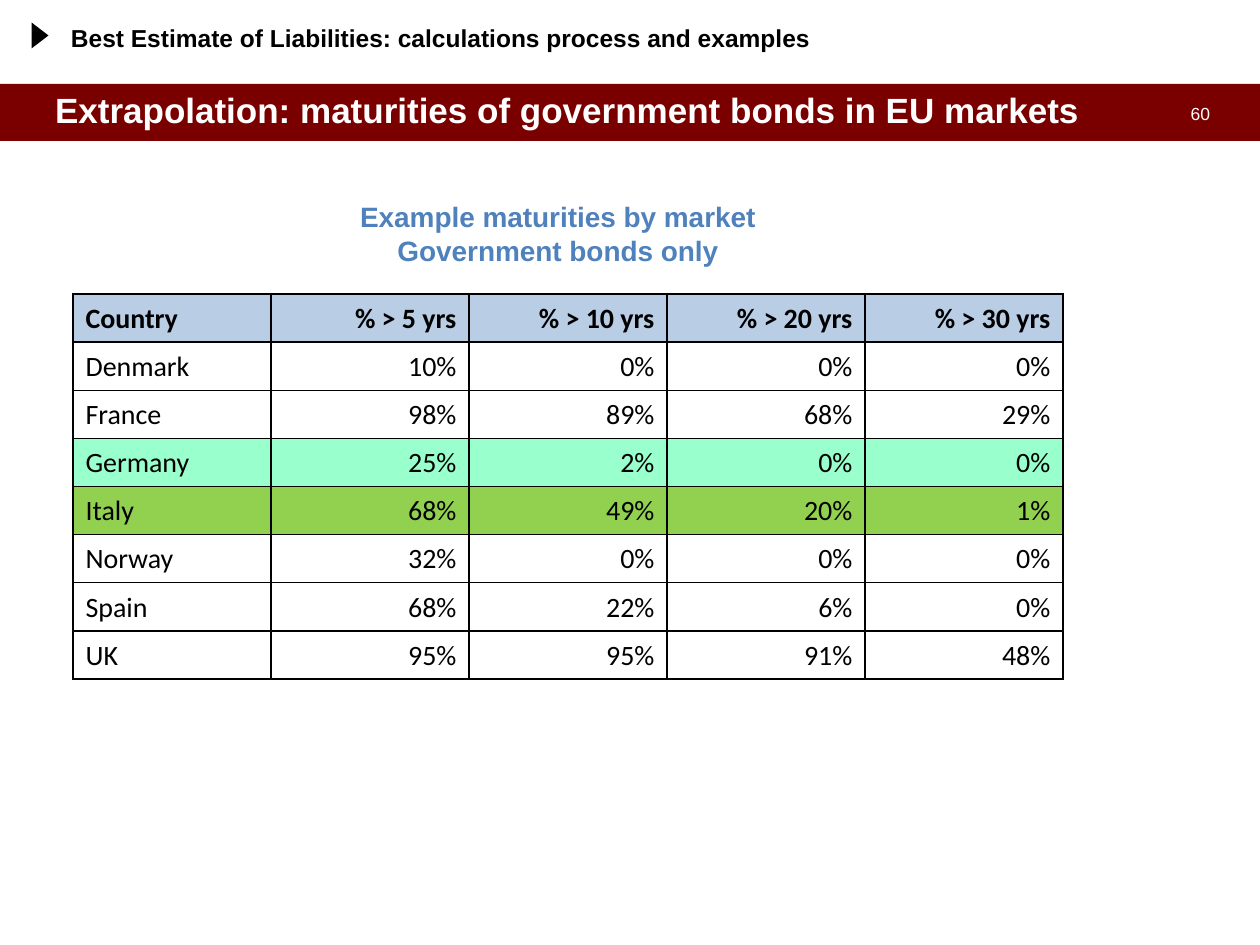
"""Build a slide showing government bond maturities by EU market."""
import pptx
import pptx.dml.color
import pptx.enum.shapes
import pptx.enum.text
import pptx.oxml
import pptx.oxml.ns
import pptx.util

SCALE = 914400 / 126
ALIGN = pptx.enum.text.PP_ALIGN
ANCHOR = pptx.enum.text.MSO_ANCHOR
SHAPES = pptx.enum.shapes.MSO_SHAPE


def px(*lengths):
    return [pptx.util.Emu(round(length * SCALE)) for length in lengths]


def style(paragraph, size, color, bold=True, align=ALIGN.LEFT, name="Arial"):
    paragraph.alignment = align
    paragraph.font.size = pptx.util.Pt(size)
    paragraph.font.name = name
    paragraph.font.bold = bold
    paragraph.font.color.rgb = pptx.dml.color.RGBColor.from_string(color)


presentation = pptx.Presentation()
presentation.slide_width, presentation.slide_height = px(1260, 945)
slide = presentation.slides.add_slide(presentation.slide_layouts[6])

for preset, box, color, rotation in [
    (SHAPES.RECTANGLE, (0, 84, 1260, 57), "7A0000", 0),
    (SHAPES.ISOSCELES_TRIANGLE, (27, 27, 26, 17), "000000", 90),
]:
    shape = slide.shapes.add_shape(preset, *px(*box))
    shape.shadow.inherit = False
    shape.fill.solid()
    shape.fill.fore_color.rgb = pptx.dml.color.RGBColor.from_string(color)
    shape.line.fill.background()
    shape.rotation = rotation

texts = [
    (["60"], (1156, 103, 54, 21), (0, 0), ANCHOR.TOP, 10, "FFFFFF", False, ALIGN.RIGHT),
    (["Extrapolation: maturities of government bonds in EU markets"],
     (43, 60, 1181, 77), (12, 6), ANCHOR.BOTTOM, 20, "FFFFFF", True, ALIGN.LEFT),
    (["Example maturities by market", "Government bonds only"],
     (64, 194, 988, 81), (12, 6), ANCHOR.TOP, 16, "4F81BD", True, ALIGN.CENTER),
    (["Best Estimate of Liabilities: calculations process and examples"],
     (71, 23, 1071, 49), (0, 0), ANCHOR.TOP, 14, "000000", True, ALIGN.LEFT),
]
for lines, box, (side, edge), anchor, size, color, bold, align in texts:
    frame = slide.shapes.add_textbox(*px(*box)).text_frame
    frame.word_wrap = True
    frame.margin_left, frame.margin_top, frame.margin_right, frame.margin_bottom = px(
        side, edge, side, edge)
    frame.vertical_anchor = anchor
    frame.text = "\n".join(lines)
    for paragraph in frame.paragraphs:
        style(paragraph, size, color, bold, align)

maturities = [
    ("Country", "% > 5 yrs", "% > 10 yrs", "% > 20 yrs", "% > 30 yrs"),
    ("Denmark", "10%", "0%", "0%", "0%"),
    ("France", "98%", "89%", "68%", "29%"),
    ("Germany", "25%", "2%", "0%", "0%"),
    ("Italy", "68%", "49%", "20%", "1%"),
    ("Norway", "32%", "0%", "0%", "0%"),
    ("Spain", "68%", "22%", "6%", "0%"),
    ("UK", "95%", "95%", "91%", "48%"),
]
row_fills = {"Country": "B9CDE5", "Germany": "99FFCC", "Italy": "92D050"}
table = slide.shapes.add_table(8, 5, *px(73, 294, 990, 385)).table
for row_index, values in enumerate(maturities):
    for column_index, value in enumerate(values):
        cell = table.cell(row_index, column_index)
        cell.text = value
        cell.vertical_anchor = ANCHOR.BOTTOM
        align = ALIGN.RIGHT if column_index else ALIGN.LEFT
        style(cell.text_frame.paragraphs[0], 16, "000000", row_index == 0, align, "Calibri")
        properties = cell._tc.get_or_add_tcPr()
        for side in ("lnL", "lnR", "lnT", "lnB"):
            properties.append(pptx.oxml.parse_xml(
                f'<a:{side} {pptx.oxml.ns.nsdecls("a")} w="12700"><a:solidFill>'
                f'<a:srgbClr val="000000"/></a:solidFill></a:{side}>'))
        if values[0] in row_fills:
            cell.fill.solid()
            cell.fill.fore_color.rgb = pptx.dml.color.RGBColor.from_string(row_fills[values[0]])
        else:
            cell.fill.background()

presentation.save("out.pptx")
